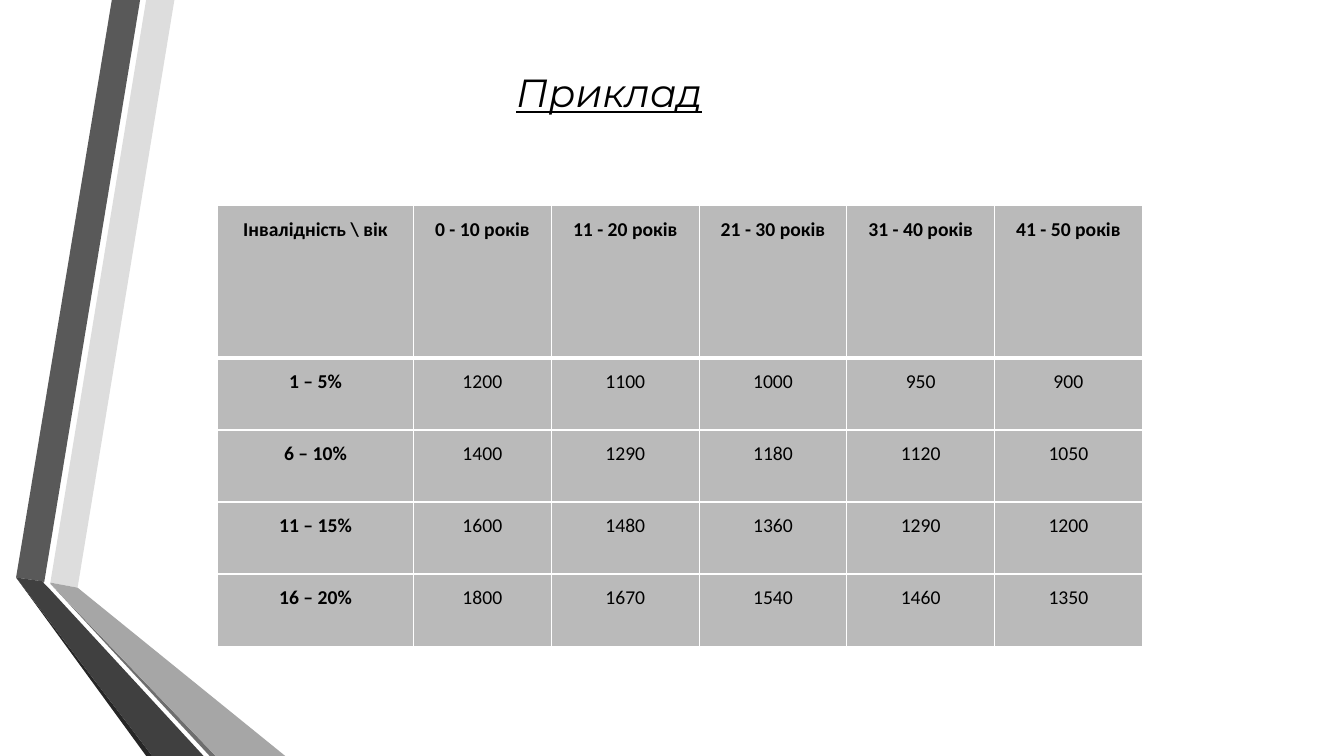
from pptx import Presentation
from pptx.dml.color import RGBColor
from pptx.enum.text import MSO_ANCHOR, MSO_AUTO_SIZE, PP_ALIGN
from pptx.oxml import parse_xml
from pptx.oxml.ns import nsdecls
from pptx.util import Pt

PX = 9144  # EMU per px, 100 px to the inch
BLACK = RGBColor(0x00, 0x00, 0x00)
WHITE = RGBColor(0xFF, 0xFF, 0xFF)
CELL_GREY = RGBColor(0xBA, 0xBA, 0xBA)

# Content
TITLE = "Приклад"
ROWS = [
    ("Інвалідність \\ вік", "0 - 10 років", "11 - 20 років",
     "21 - 30 років", "31 - 40 років", "41 - 50 років"),
    ("1 – 5%", "1200", "1100", "1000", "950", "900"),
    ("6 – 10%", "1400", "1290", "1180", "1120", "1050"),
    ("11 – 15%", "1600", "1480", "1360", "1290", "1200"),
    ("16 – 20%", "1800", "1670", "1540", "1460", "1350"),
]
RIBBONS = [
    (RGBColor(0xDD, 0xDD, 0xDD), [(50, 578), (77, 583), (173, 0), (145, 0)]),
    (RGBColor(0x59, 0x59, 0x59), [(139, 0), (111, 0), (16, 573), (44, 577)]),
    (RGBColor(0x26, 0x26, 0x26), [(16, 573), (145, 750), (151, 750)]),
    (RGBColor(0x6E, 0x6E, 0x6E), [(50, 579), (208, 750), (214, 750)]),
    (RGBColor(0xA6, 0xA6, 0xA6),
     [(50, 579), (214, 750), (283, 750), (77, 583), (50, 578)]),
    (RGBColor(0x40, 0x40, 0x40),
     [(202, 750), (48, 583), (43, 578), (44, 577), (16, 573), (151, 750)]),
]

# Table geometry in px
LEFT, TOP, WIDTH, HEIGHT = 216, 204, 917, 437
LABEL_WIDTH, FIRST_AGE_WIDTH, HEADER_HEIGHT = 194, 137, 151


def px(value):
    return round(value * PX)


def set_borders(cell, top, bottom):
    """Give a cell white borders; widths are in points."""
    properties = cell._tc.get_or_add_tcPr()
    for side, width in (("L", 1), ("R", 1), ("T", top), ("B", bottom)):
        properties.append(parse_xml(
            f'<a:ln{side} {nsdecls("a")} w="{Pt(width)}"><a:solidFill>'
            f'<a:srgbClr val="{WHITE}"/></a:solidFill></a:ln{side}>'))


def add_ribbons(page):
    for color, points in RIBBONS:
        builder = page.shapes.build_freeform(*points[0], scale=PX)
        builder.add_line_segments(points[1:], close=True)
        ribbon = builder.convert_to_shape()
        ribbon.shadow.inherit = False
        ribbon.fill.solid()
        ribbon.fill.fore_color.rgb = color
        ribbon.line.fill.background()


def add_title(page):
    title = page.shapes.title
    title.left, title.top, title.width, title.height = map(px, (502, 63, 212, 57))
    frame = title.text_frame
    frame.text = TITLE
    frame.word_wrap = False
    frame.auto_size = MSO_AUTO_SIZE.SHAPE_TO_FIT_TEXT
    frame.vertical_anchor = MSO_ANCHOR.TOP
    para = frame.paragraphs[0]
    para.alignment = PP_ALIGN.LEFT
    font = para.font
    font.name, font.size = "Montserrat", Pt(28)
    font.italic = font.underline = True
    font.color.rgb = BLACK


def add_price_table(page):
    row_count, column_count = len(ROWS), len(ROWS[0])
    table = page.shapes.add_table(
        row_count, column_count, *map(px, (LEFT, TOP, WIDTH, HEIGHT))).table
    age_width = (WIDTH - LABEL_WIDTH - FIRST_AGE_WIDTH) / (column_count - 2)
    widths = [LABEL_WIDTH, FIRST_AGE_WIDTH] + [age_width] * (column_count - 2)
    row_height = (HEIGHT - HEADER_HEIGHT) / (row_count - 1)
    heights = [HEADER_HEIGHT] + [row_height] * (row_count - 1)
    for column, width in zip(table.columns, widths):
        column.width = px(width)
    for row, height in zip(table.rows, heights):
        row.height = px(height)

    for i, values in enumerate(ROWS):
        for j, value in enumerate(values):
            cell = table.cell(i, j)
            cell.text = value
            cell.margin_left = cell.margin_right = px(7)
            cell.margin_top = cell.margin_bottom = 0
            set_borders(cell, top=3 if i == 1 else 1, bottom=3 if i == 0 else 1)
            cell.fill.solid()
            cell.fill.fore_color.rgb = CELL_GREY
            para = cell.text_frame.paragraphs[0]
            para.alignment = PP_ALIGN.CENTER
            para.line_spacing = 1.5
            font = para.font
            font.name, font.size = "Calibri", Pt(14)
            font.bold = i == 0 or j == 0
            font.color.rgb = BLACK


def main():
    deck = Presentation()
    deck.slide_width, deck.slide_height = px(1333), px(750)
    page = deck.slides.add_slide(deck.slide_layouts[5])
    add_ribbons(page)
    add_price_table(page)
    add_title(page)
    deck.save("out.pptx")


if __name__ == "__main__":
    main()
